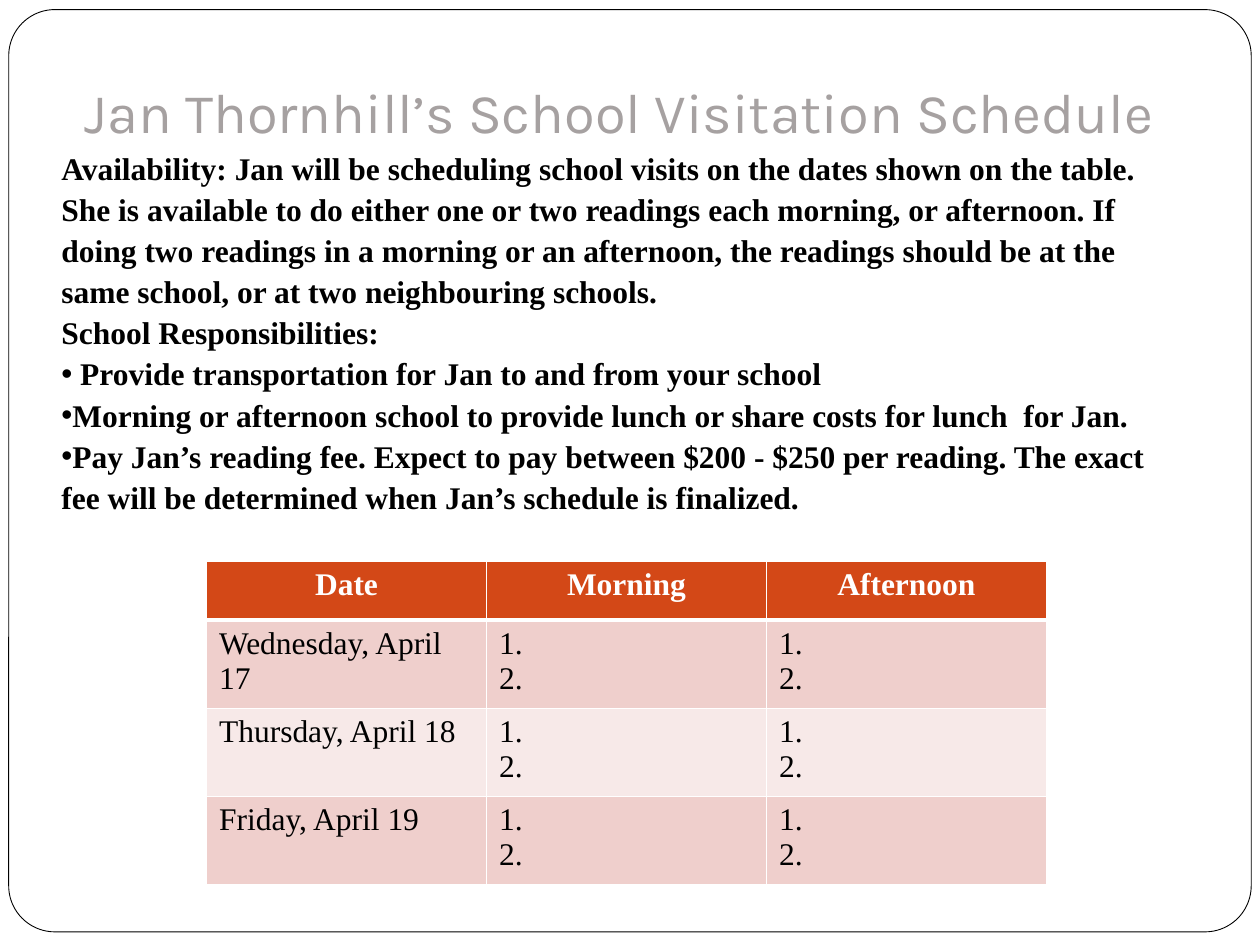
from lxml.etree import SubElement
from pptx import Presentation
from pptx.dml.color import RGBColor
from pptx.enum.shapes import MSO_SHAPE
from pptx.enum.text import PP_ALIGN
from pptx.oxml.ns import qn
from pptx.util import Pt

BLACK = RGBColor(0x00, 0x00, 0x00)
WHITE = RGBColor(0xFF, 0xFF, 0xFF)
GREY = RGBColor(0xA6, 0xA1, 0xA1)
ORANGE = RGBColor(0xD3, 0x48, 0x17)
ROSE = RGBColor(0xEF, 0xCF, 0xCC)
PALE = RGBColor(0xF7, 0xE9, 0xE8)

TITLE = "Jan Thornhill’s School Visitation Schedule"
INTRO = [
    "Availability: Jan will be scheduling school visits on the dates shown on "
    "the table. She is available to do either one or two readings each "
    "morning, or afternoon. If doing two readings in a morning or an "
    "afternoon, the readings should be at the same school, or at two "
    "neighbouring schools.",
    "School Responsibilities:",
]
DUTIES = [
    " Provide transportation for Jan to and from your school",
    "Morning or afternoon school to provide lunch or share costs for lunch  for Jan.",
    "Pay Jan’s reading fee. Expect to pay between $200 - $250 per reading. "
    "The exact fee will be determined when Jan’s schedule is finalized.",
]
HEADS = ["Date", "Morning", "Afternoon"]
DATES = ["Wednesday, April 17", "Thursday, April 18", "Friday, April 19"]
SLOTS = ["1.", "2."]


def write(frame, lines, size=18, font="Times New Roman", color=BLACK,
          bold=False, align=PP_ALIGN.LEFT, space=None, bullet=False):
    """Add each line as a paragraph, starting in the empty first one if free."""
    for line in lines:
        first = frame.paragraphs[0]
        para = frame.add_paragraph() if first.runs else first
        para.alignment = align
        if space:
            para.line_spacing = space
        if bullet:
            props = para._p.get_or_add_pPr()
            SubElement(props, qn("a:buFont"), typeface="Arial")
            SubElement(props, qn("a:buChar"), char="•")
        run = para.add_run()
        run.text = line
        run.font.size = Pt(size)
        run.font.name = font
        run.font.bold = bold
        run.font.color.rgb = color


def add_frame(slide):
    frame = slide.shapes.add_shape(MSO_SHAPE.ROUNDED_RECTANGLE,
                                   Pt(5), Pt(5.5), Pt(710), Pt(527))
    frame.adjustments[0] = 0.05
    frame.shadow.inherit = False
    frame.fill.solid()
    frame.fill.fore_color.rgb = WHITE
    frame.line.color.rgb = BLACK
    frame.line.width = Pt(0.5)


def add_notice(slide):
    box = slide.shapes.add_textbox(Pt(28), Pt(39.6), Pt(652.5), Pt(351.5))
    frame = box.text_frame
    frame.word_wrap = True
    frame.margin_top = Pt(5)
    write(frame, [TITLE], size=32, font="Karla", color=GREY,
          align=PP_ALIGN.CENTER)
    write(frame, INTRO, bold=True, space=1.09)
    write(frame, DUTIES, bold=True, space=1.09, bullet=True)


def style_cell(cell, fill, base=1):
    """Draw white borders, the lower one base points wide, then the fill."""
    props = cell._tc.get_or_add_tcPr()
    for side, width in zip("LRTB", (1, 1, 1, base)):
        line = SubElement(props, qn(f"a:ln{side}"), w=str(Pt(width)))
        solid = SubElement(line, qn("a:solidFill"))
        SubElement(solid, qn("a:srgbClr"), val=str(WHITE))
    cell.fill.solid()
    cell.fill.fore_color.rgb = fill


def add_table(slide):
    table = slide.shapes.add_table(len(DATES) + 1, len(HEADS), Pt(118),
                                   Pt(320.5), Pt(480), Pt(185)).table
    for col in table.columns:
        col.width = Pt(160)
    for row in table.rows:
        row.height = Pt(50.4)
    table.rows[0].height = Pt(33.8)
    for c, head in enumerate(HEADS):
        cell = table.cell(0, c)
        style_cell(cell, ORANGE, base=3)
        write(cell.text_frame, [head], color=WHITE, bold=True,
              align=PP_ALIGN.CENTER)
    for r, date in enumerate(DATES, 1):
        for c, lines in enumerate([[date], SLOTS, SLOTS]):
            cell = table.cell(r, c)
            style_cell(cell, ROSE if r % 2 else PALE, base=1)
            if r == 1:
                top = cell._tc.tcPr.find(qn("a:lnT"))
                top.set("w", str(Pt(3)))
            write(cell.text_frame, lines)


def main():
    deck = Presentation()
    deck.slide_width, deck.slide_height = Pt(720), Pt(540)
    slide = deck.slides.add_slide(deck.slide_layouts[6])
    add_frame(slide)
    add_notice(slide)
    add_table(slide)
    deck.save("out.pptx")


if __name__ == "__main__":
    main()
